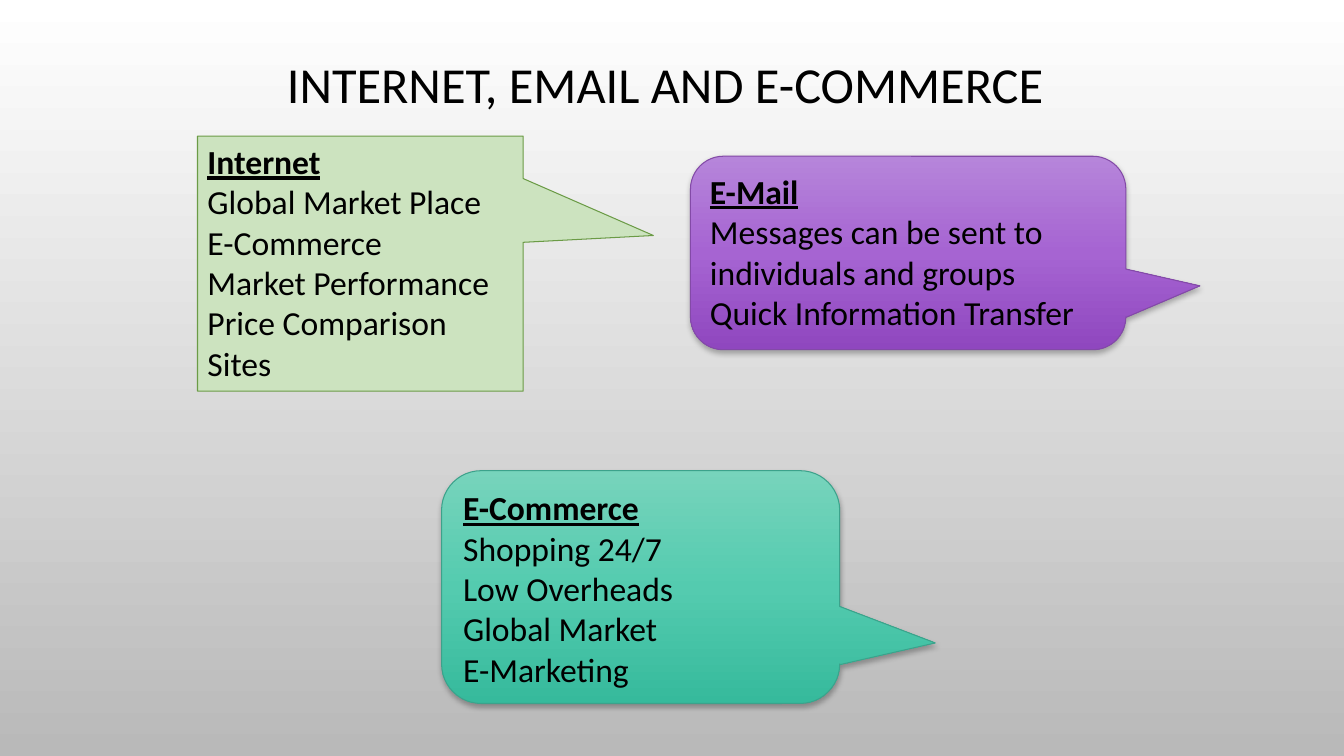
from copy import deepcopy

from lxml.etree import SubElement
from pptx import Presentation
from pptx.dml.color import RGBColor
from pptx.enum.shapes import MSO_SHAPE
from pptx.enum.text import MSO_ANCHOR, PP_ALIGN
from pptx.oxml.ns import qn
from pptx.util import Pt

FONT = "Calibri"
COLORS = {
    "text": "000000",
    "shadow": "000000",
    "page": ["FFFFFF", "B9B9B9"],
    "green": ["CCE3BF"],
    "green line": "6B9B46",
    "teal": ["77D4BC", "54CBAF", "36BA9C"],
    "teal line": "3CA28B",
    "purple": ["B685DA", "A664D2", "8F47BF"],
    "purple line": "834AA7",
}
TITLE_BOX = (67, 0, 816.5, 125.3)
CALLOUTS = [
    (MSO_SHAPE.RECTANGULAR_CALLOUT, (141.1, 97.2, 232.6, 182.2),
     (0.9, -0.11), "green", "Internet",
     ["Global Market Place", "E-Commerce", "Market Performance",
      "Price Comparison Sites"]),
    (MSO_SHAPE.ROUNDED_RECTANGULAR_CALLOUT, (315.4, 336.2, 284.4, 166.3),
     (0.74, 0.24, 0.17), "teal", "E-Commerce",
     ["Shopping 24/7", "Low Overheads", "Global Market", "E-Marketing"]),
    (MSO_SHAPE.ROUNDED_RECTANGULAR_CALLOUT, (493.2, 111.6, 311, 138.2),
     (0.67, 0.17, 0.17), "purple", "E-Mail",
     ["Messages can be sent to individuals and groups",
      "Quick Information Transfer"]),
]


def fill_downward(fill, owner, colors):
    """Fill with evenly spaced colours from top to bottom; owner is the XML holding the fill."""
    if len(colors) == 1:
        fill.solid()
        fill.fore_color.rgb = RGBColor.from_string(colors[0])
        return
    fill.gradient()
    fill.gradient_angle = 270
    stop_list = next(owner.iter(qn("a:gsLst")))
    while len(stop_list) < len(colors):
        stop_list.append(deepcopy(stop_list[0]))
    for index, (stop, color) in enumerate(zip(fill.gradient_stops, colors)):
        stop.position = index / (len(colors) - 1)
        stop.color.rgb = RGBColor.from_string(color)


def add_soft_shadow(shape):
    effects = shape._element.spPr.find(qn("a:effectLst"))
    shadow = SubElement(effects, qn("a:outerShdw"), blurRad=str(Pt(4)),
                        dist=str(Pt(2)), dir="5400000", algn="ctr", rotWithShape="0")
    color = SubElement(shadow, qn("a:srgbClr"), val=COLORS["shadow"])
    SubElement(color, qn("a:alpha"), val="28000")


def add_span(para, text, size, strong=False):
    span = para.add_run()
    span.text = text
    span.font.name = FONT
    span.font.size = Pt(size)
    span.font.bold = span.font.underline = strong
    span.font.color.rgb = RGBColor.from_string(COLORS["text"])


def add_title(page, box, text):
    frame = page.shapes.add_textbox(*map(Pt, box)).text_frame
    frame.word_wrap = True
    frame.vertical_anchor = MSO_ANCHOR.MIDDLE
    para = frame.paragraphs[0]
    para.alignment = PP_ALIGN.CENTER
    para.line_spacing = 0.9
    add_span(para, text, 36)


def add_callout(page, kind, box, adjustments, color, heading, lines):
    shape = page.shapes.add_shape(kind, *map(Pt, box))
    for index, value in enumerate(adjustments):
        shape.adjustments[index] = value
    fill_downward(shape.fill, shape._element, COLORS[color])
    shape.line.color.rgb = RGBColor.from_string(COLORS[color + " line"])
    shape.line.width = Pt(0.75)
    shape.shadow.inherit = False
    if kind == MSO_SHAPE.ROUNDED_RECTANGULAR_CALLOUT:
        add_soft_shadow(shape)

    frame = shape.text_frame
    frame.word_wrap = True
    frame.vertical_anchor = MSO_ANCHOR.TOP
    for index, text in enumerate([heading, *lines]):
        para = frame.add_paragraph() if index else frame.paragraphs[0]
        para.alignment = PP_ALIGN.LEFT
        add_span(para, text, 24, strong=index == 0)


def main():
    deck = Presentation()
    deck.slide_width, deck.slide_height = Pt(960), Pt(540)
    page = deck.slides.add_slide(deck.slide_layouts[6])
    fill_downward(page.background.fill, page._element, COLORS["page"])
    add_title(page, TITLE_BOX, "INTERNET, EMAIL AND E-COMMERCE")
    for callout in CALLOUTS:
        add_callout(page, *callout)
    deck.save("out.pptx")


if __name__ == "__main__":
    main()
